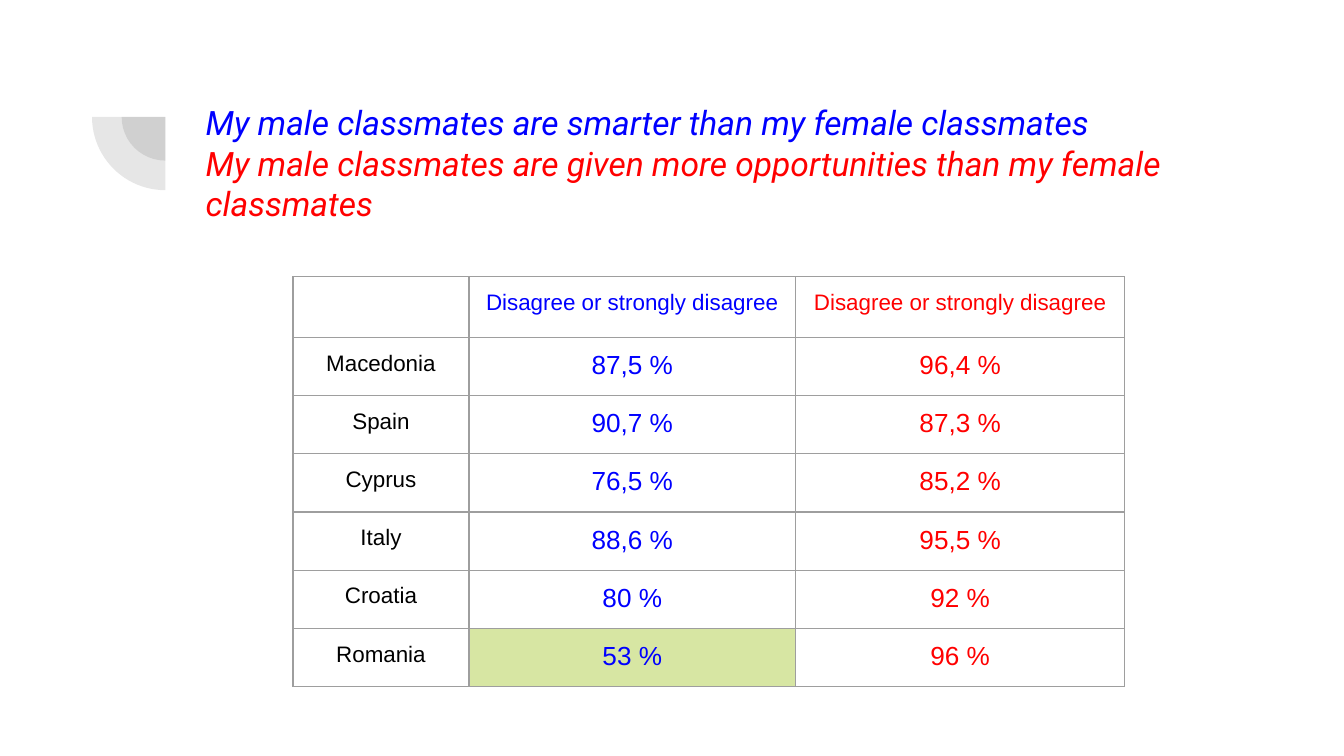
from lxml import etree
from pptx import Presentation
from pptx.dml.color import RGBColor
from pptx.enum.shapes import MSO_SHAPE
from pptx.enum.text import MSO_ANCHOR, MSO_AUTO_SIZE, PP_ALIGN
from pptx.oxml import parse_xml
from pptx.oxml.ns import nsdecls, qn
from pptx.util import Inches, Pt

PIE = MSO_SHAPE.PIE
TOP = MSO_ANCHOR.TOP
LEFT, CENTER = PP_ALIGN.LEFT, PP_ALIGN.CENTER

BLUE, RED, BLACK, WHITE = "0000FF", "FF0000", "000000", "FFFFFF"
GRAY, BORDER, HIGHLIGHT = "424242", "9E9E9E", "D7E6A3"

TITLE = [
    ("My male classmates are smarter than my female classmates", BLUE),
    ("My male classmates are given more opportunities than my female classmates", RED),
]
ROWS = [
    ("", "Disagree or strongly disagree", "Disagree or strongly disagree"),
    ("Macedonia", "87,5 %", "96,4 %"),
    ("Spain", "90,7 %", "87,3 %"),
    ("Cyprus", "76,5 %", "85,2 %"),
    ("Italy", "88,6 %", "95,5 %"),
    ("Croatia", "80 %", "92 %"),
    ("Romania", "53 %", "96 %"),
]
COLUMN_COLORS = (BLACK, BLUE, RED)
COLUMN_WIDTHS = (1.31, 2.43, 2.45)
TABLE_HEIGHT, HEADER_HEIGHT = 3.05, 0.45
ROW_HEIGHT = (TABLE_HEIGHT - HEADER_HEIGHT) / (len(ROWS) - 1)
HIGHLIGHTED_CELL = (6, 1)
PIE_CENTER = (1.23, 0.87)
PIE_SIZES = (0.65, 1.09)
MARGIN = Inches(0.1)


def rgb(value):
    return RGBColor.from_string(value)


def write(paragraph, text, font="Arial", size=12, color=BLACK, italic=False, align=CENTER):
    paragraph.alignment = align
    if not text:  # the end mark sets the line height of an empty paragraph
        etree.SubElement(paragraph._p, qn("a:endParaRPr"), sz=str(size * 100))
        return
    run = paragraph.add_run()
    run.text = text
    run.font.name = font
    run.font.size = Pt(size)
    run.font.italic = italic
    run.font.color.rgb = rgb(color)


def set_margins(target):
    target.margin_left = target.margin_right = MARGIN
    target.margin_top = target.margin_bottom = MARGIN


def add_quarter(slide, size):
    left, top = (center - size / 2 for center in PIE_CENTER)
    shape = slide.shapes.add_shape(PIE, Inches(left), Inches(top), Inches(size), Inches(size))
    shape.adjustments[0], shape.adjustments[1] = 108, 162  # 180 and 270 degrees
    shape.rotation = 270
    shape.shadow.inherit = False
    shape.line.fill.background()
    shape.fill.solid()
    shape.fill.fore_color.rgb = rgb(GRAY)
    color = shape.fill._xPr.find(".//" + qn("a:srgbClr"))
    etree.SubElement(color, qn("a:alpha"), val="13000")


def add_title(slide):
    title = slide.shapes.title
    title.left, title.top = Inches(1.43), Inches(0.66)
    title.width, title.height = Inches(7.69), Inches(1.09)
    frame = title.text_frame
    frame.word_wrap = True
    frame.auto_size = MSO_AUTO_SIZE.NONE
    frame.vertical_anchor = TOP
    set_margins(frame)
    for index, (text, color) in enumerate(TITLE):
        paragraph = frame.add_paragraph() if index else frame.paragraphs[0]
        paragraph.space_before = Pt(0)
        write(paragraph, text, font="Roboto", size=18, color=color, italic=True, align=LEFT)


def add_borders(cell):
    properties = cell._tc.get_or_add_tcPr()
    for side in "LRTB":
        properties.append(parse_xml(
            f'<a:ln{side} {nsdecls("a")} w="{Pt(0.75)}"><a:solidFill>'
            f'<a:srgbClr val="{BORDER}"/></a:solidFill></a:ln{side}>'))


def add_results_table(slide):
    table = slide.shapes.add_table(
        len(ROWS), len(COLUMN_WIDTHS), Inches(2.18), Inches(2.06),
        Inches(sum(COLUMN_WIDTHS)), Inches(TABLE_HEIGHT)).table
    table.first_row = table.horz_banding = False
    for column, width in zip(table.columns, COLUMN_WIDTHS):
        column.width = Inches(width)
    for row_index, values in enumerate(ROWS):
        table.rows[row_index].height = Inches(ROW_HEIGHT if row_index else HEADER_HEIGHT)
        for column_index, text in enumerate(values):
            cell = table.cell(row_index, column_index)
            set_margins(cell)
            cell.vertical_anchor = TOP
            add_borders(cell)
            highlighted = (row_index, column_index) == HIGHLIGHTED_CELL
            cell.fill.solid()
            cell.fill.fore_color.rgb = rgb(HIGHLIGHT if highlighted else WHITE)
            write(cell.text_frame.paragraphs[0], text,
                  size=14 if row_index and column_index else 12,
                  color=COLUMN_COLORS[column_index])


def main():
    presentation = Presentation()
    presentation.slide_width = Inches(10)
    presentation.slide_height = Inches(10 * 9 / 16)
    slide = presentation.slides.add_slide(presentation.slide_layouts[5])
    for size in PIE_SIZES:
        add_quarter(slide, size)
    add_title(slide)
    add_results_table(slide)
    presentation.save("out.pptx")


if __name__ == "__main__":
    main()
